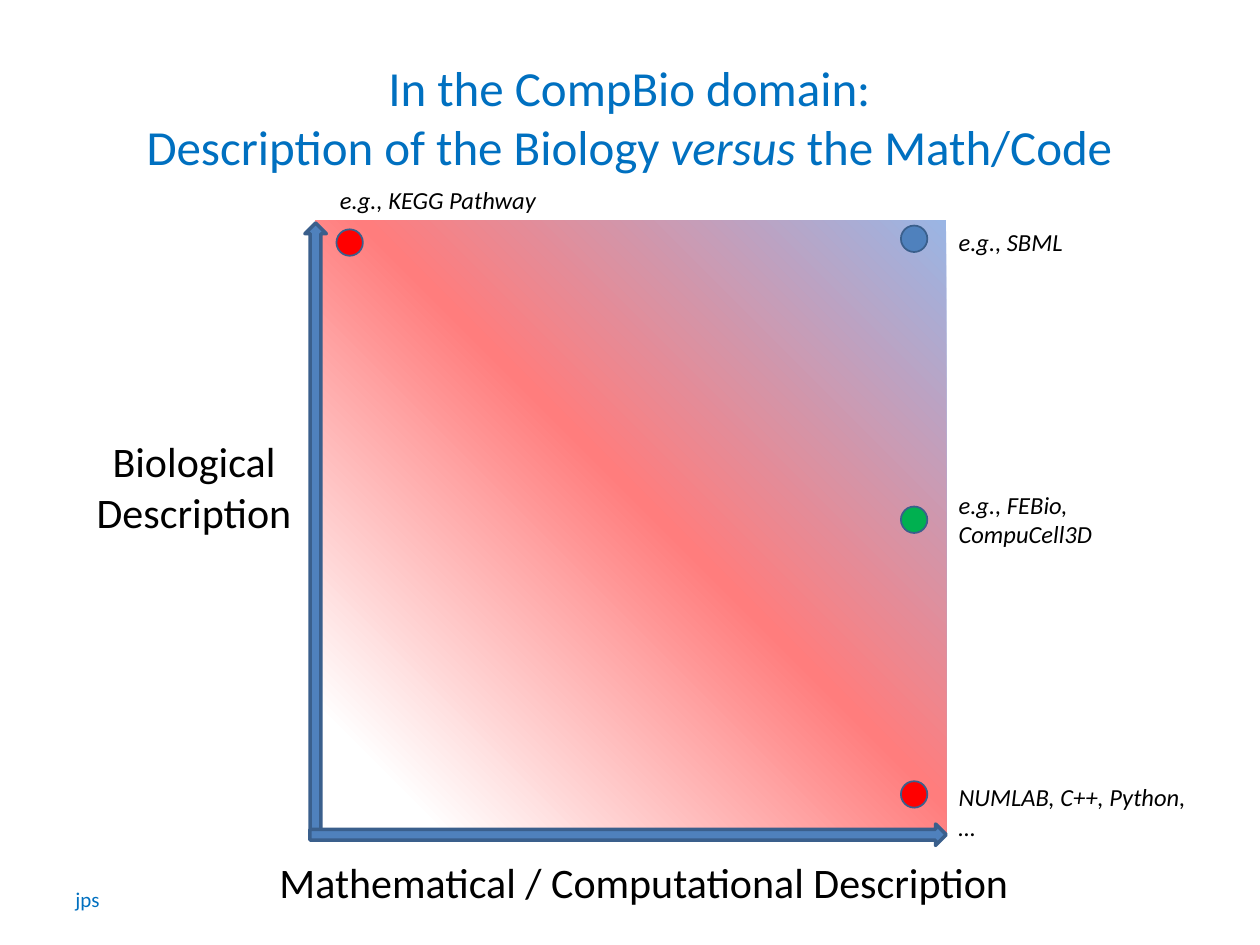
"""Build a slide that maps modelling tools by biological and mathematical description."""
from copy import deepcopy
from typing import NamedTuple

from lxml import etree
from pptx import Presentation
from pptx.dml.color import RGBColor
from pptx.enum import shapes, text
from pptx.oxml import ns
from pptx.util import Inches, Pt

FONT = "Calibri"
BLUE, BLACK = "0070C0", "000000"
ARROW_FILL, OUTLINE = "4F81BD", "3A5F8C"
MARKER_SIZE = 0.21
MARKER_LEFT, NOTE_LEFT = 7.15, 7.51


class Box(NamedTuple):
    left: float
    top: float
    width: float
    height: float

    def lengths(self) -> list:
        return [Inches(value) for value in self]


class Label(NamedTuple):
    wording: str
    box: Box
    size: int
    color: str = BLACK
    italic: bool = False
    wrap: bool = False
    centered: bool = False


class Marker(NamedTuple):
    left: float
    top: float
    color: str


GRADIENT = [(0, "9AB5E4"), (0.47, "FF7D7D"), (0.9, "FFFFFF"), (1, "FFFFFF")]
AXES = [(Box(0.06, 4.13, 4.89, 0.17), 270), (Box(2.46, 6.54, 5.05, 0.17), 0)]
LABELS = [
    Label("jps", Box(0.5, 6.99, 0.4, 0.3), 12, BLUE),
    Label("Mathematical / Computational Description", Box(2.12, 6.75, 6.04, 0.5), 24),
    Label("Biological Description", Box(0.58, 3.41, 1.92, 0.91), 24, wrap=True, centered=True),
    Label("e.g., KEGG Pathway", Box(2.6, 1.42, 1.77, 0.34), 14, italic=True),
    Label("e.g., SBML", Box(NOTE_LEFT, 1.75, 1.03, 0.34), 14, italic=True),
    Label("e.g., FEBio,\nCompuCell3D", Box(NOTE_LEFT, 3.84, 1.27, 0.57), 14, italic=True),
    Label("NUMLAB, C++, Python, …", Box(NOTE_LEFT, 6.16, 2.15, 0.34), 14, italic=True),
]
MARKERS = [
    Marker(2.67, 1.82, "FF0000"),
    Marker(MARKER_LEFT, 1.79, ARROW_FILL),
    Marker(MARKER_LEFT, 4.02, "00B050"),
    Marker(MARKER_LEFT, 6.2, "FF0000"),
]


def rgb(color: str) -> RGBColor:
    return RGBColor.from_string(color)


def format_run(run, size: int, color: str, italic: bool = False) -> None:
    run.font.name = FONT
    run.font.size = Pt(size)
    run.font.italic = italic
    run.font.color.rgb = rgb(color)


def add_title(slide) -> None:
    title = slide.shapes.title
    title.left, title.top, title.width, title.height = Box(0.33, 0.3, 9.33, 1.25).lengths()
    title.text_frame.vertical_anchor = text.MSO_ANCHOR.MIDDLE
    paragraph = title.text_frame.paragraphs[0]
    paragraph.text = "In the CompBio domain:\vDescription of the Biology "
    paragraph.alignment = text.PP_ALIGN.CENTER
    for wording in ("versus", " the Math/Code"):
        paragraph.add_run().text = wording
    for run in paragraph.runs:
        format_run(run, 28, BLUE, run.text == "versus")
    line_break = paragraph._p.find(ns.qn("a:br"))
    etree.SubElement(line_break, ns.qn("a:rPr"), sz="2800")


def add_gradient_field(slide) -> None:
    field = slide.shapes.add_shape(
        shapes.MSO_SHAPE.RECTANGLE, *Box(2.5, 1.75, 5.01, 4.87).lengths())
    field.shadow.inherit = False
    field.line.fill.background()
    field.fill.gradient()
    field.fill.gradient_angle = 225
    stop_list = field._element.spPr.find(ns.qn("a:gradFill")).find(ns.qn("a:gsLst"))
    for stop in list(stop_list):
        stop_list.append(deepcopy(stop))
    for stop, (position, color) in zip(field.fill.gradient_stops, GRADIENT):
        stop.position = position
        stop.color.rgb = rgb(color)


def add_outlined(parent, kind, box: Box, color: str, line_width: float):
    shape = parent.shapes.add_shape(kind, *box.lengths())
    shape.shadow.inherit = False
    shape.fill.solid()
    shape.fill.fore_color.rgb = rgb(color)
    shape.line.color.rgb = rgb(OUTLINE)
    shape.line.width = Pt(line_width)
    return shape


def add_label(slide, label: Label) -> None:
    frame = slide.shapes.add_textbox(*label.box.lengths()).text_frame
    frame.word_wrap = label.wrap
    frame.auto_size = text.MSO_AUTO_SIZE.SHAPE_TO_FIT_TEXT
    frame.text = label.wording
    for paragraph in frame.paragraphs:
        if label.centered:
            paragraph.alignment = text.PP_ALIGN.CENTER
        for run in paragraph.runs:
            format_run(run, label.size, label.color, label.italic)


def main() -> None:
    presentation = Presentation()
    presentation.slide_width, presentation.slide_height = Inches(10), Inches(7.5)
    slide = presentation.slides.add_slide(presentation.slide_layouts[5])
    add_gradient_field(slide)
    add_title(slide)
    axes = slide.shapes.add_group_shape()
    for box, rotation in AXES:
        arrow = add_outlined(axes, shapes.MSO_SHAPE.RIGHT_ARROW, box, ARROW_FILL, 2)
        arrow.rotation = rotation
    for label in LABELS:
        add_label(slide, label)
    for marker in MARKERS:
        box = Box(marker.left, marker.top, MARKER_SIZE, MARKER_SIZE)
        add_outlined(slide, shapes.MSO_SHAPE.OVAL, box, marker.color, 1)
    presentation.save("out.pptx")


if __name__ == "__main__":
    main()
